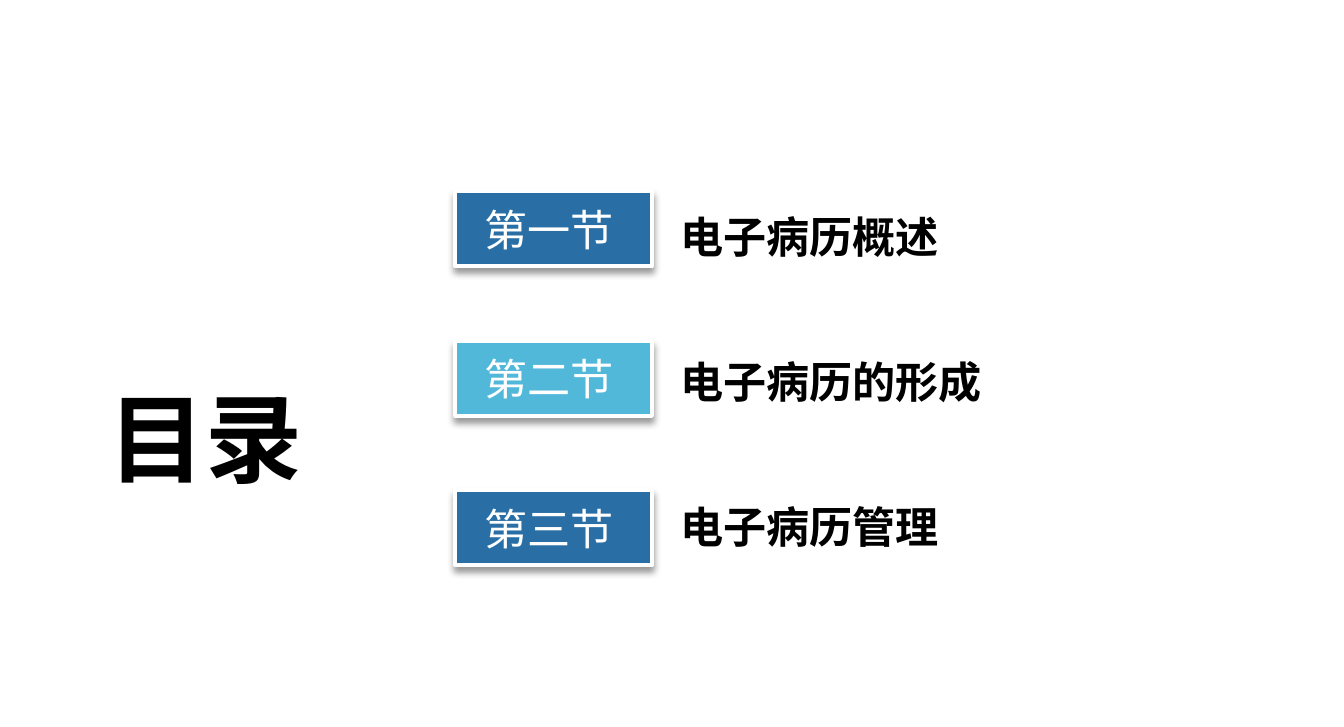
from lxml.etree import SubElement as Sub
from pptx import Presentation
from pptx.dml.color import RGBColor as RGB
from pptx.enum.shapes import MSO_SHAPE as Shape
from pptx.enum.text import MSO_ANCHOR as Anchor, MSO_AUTO_SIZE as Auto, PP_ALIGN as Align
from pptx.oxml.ns import qn
from pptx.util import Inches, Pt

BLACK = RGB(0x00, 0x00, 0x00)
WHITE = RGB(0xFF, 0xFF, 0xFF)
NAVY = RGB(0x29, 0x6F, 0xA5)
SKY = RGB(0x52, 0xB8, 0xDA)
SANS = "Noto Sans CJK SC"
SERIF = "Times New Roman"
PARTS = [
    ("第一节 ", "电子病历概述", NAVY, 3.3),
    ("第二节 ", "电子病历的形成", SKY, 3.59),
    ("第三节 ", "电子病历管理", NAVY, 3.3),
]


def write(shape, text, size=24, face=SERIF, color=BLACK, bold=False,
          align=Align.LEFT, anchor=Anchor.TOP, wrap=True, grow=True):
    """Put formatted text into a shape."""
    frame = shape.text_frame
    frame.word_wrap = wrap
    frame.auto_size = Auto.SHAPE_TO_FIT_TEXT if grow else Auto.NONE
    frame.vertical_anchor = anchor
    line = frame.paragraphs[0]
    line.alignment = align
    run = line.add_run()
    run.text = text
    font = run.font
    font.size, font.bold, font.name = Pt(size), bold, face
    font.color.rgb = color
    Sub(run._r.get_or_add_rPr(), qn("a:ea"), typeface=SANS)


def shade(shape):
    """Give a shape a soft shadow straight below it."""
    shape.shadow.inherit = False
    effects = shape._element.spPr.find(qn("a:effectLst"))
    outer = Sub(effects, qn("a:outerShdw"), blurRad=str(Pt(4)), dist=str(Pt(3)),
                dir="5400000", algn="t", rotWithShape="0")
    tint = Sub(outer, qn("a:srgbClr"), val=str(BLACK))
    Sub(tint, qn("a:alpha"), val="40000")


def add_tag(slide, text, fill, left, top, width, height):
    """Draw one coloured section tag."""
    tag = slide.shapes.add_shape(Shape.RECTANGLE, Inches(left), Inches(top),
                                 Inches(width), Inches(height))
    tag.fill.solid()
    tag.fill.fore_color.rgb = fill
    tag.line.color.rgb = WHITE
    tag.line.width = Pt(2.25)
    shade(tag)
    write(tag, text, color=WHITE, align=Align.CENTER, anchor=Anchor.MIDDLE, grow=False)


def add_text(slide, text, left, top, width, height, **style):
    """Add a text box with bold text."""
    box = slide.shapes.add_textbox(Inches(left), Inches(top), Inches(width), Inches(height))
    write(box, text, bold=True, **style)


def add_list(slide, left, top, width, height):
    """Stack the section tags and their names down the given box."""
    tag_w, tag_h, name_h = 1.52, 0.58, 0.5
    name_x, name_y, name_step = left + 1.64, top + 0.1, 1.12
    step = (height - tag_h) / (len(PARTS) - 1)
    for i, (label, name, fill, name_w) in enumerate(PARTS):
        add_tag(slide, label, fill, left, top + i * step, tag_w, tag_h)
        add_text(slide, name, name_x, name_y + i * name_step,
                 min(name_w, left + width - name_x), name_h)


def main():
    """Build and save the contents slide."""
    deck = Presentation()
    deck.slide_width, deck.slide_height = Inches(10.39), Inches(5.62)
    slide = deck.slides.add_slide(deck.slide_layouts[6])
    add_text(slide, "目录", 0.74, 2.88, 1.79, 1.01, size=54, face=SANS, wrap=False)
    add_list(slide, 3.52, 1.48, 5.23, 2.89)
    deck.save("out.pptx")


if __name__ == "__main__":
    main()
